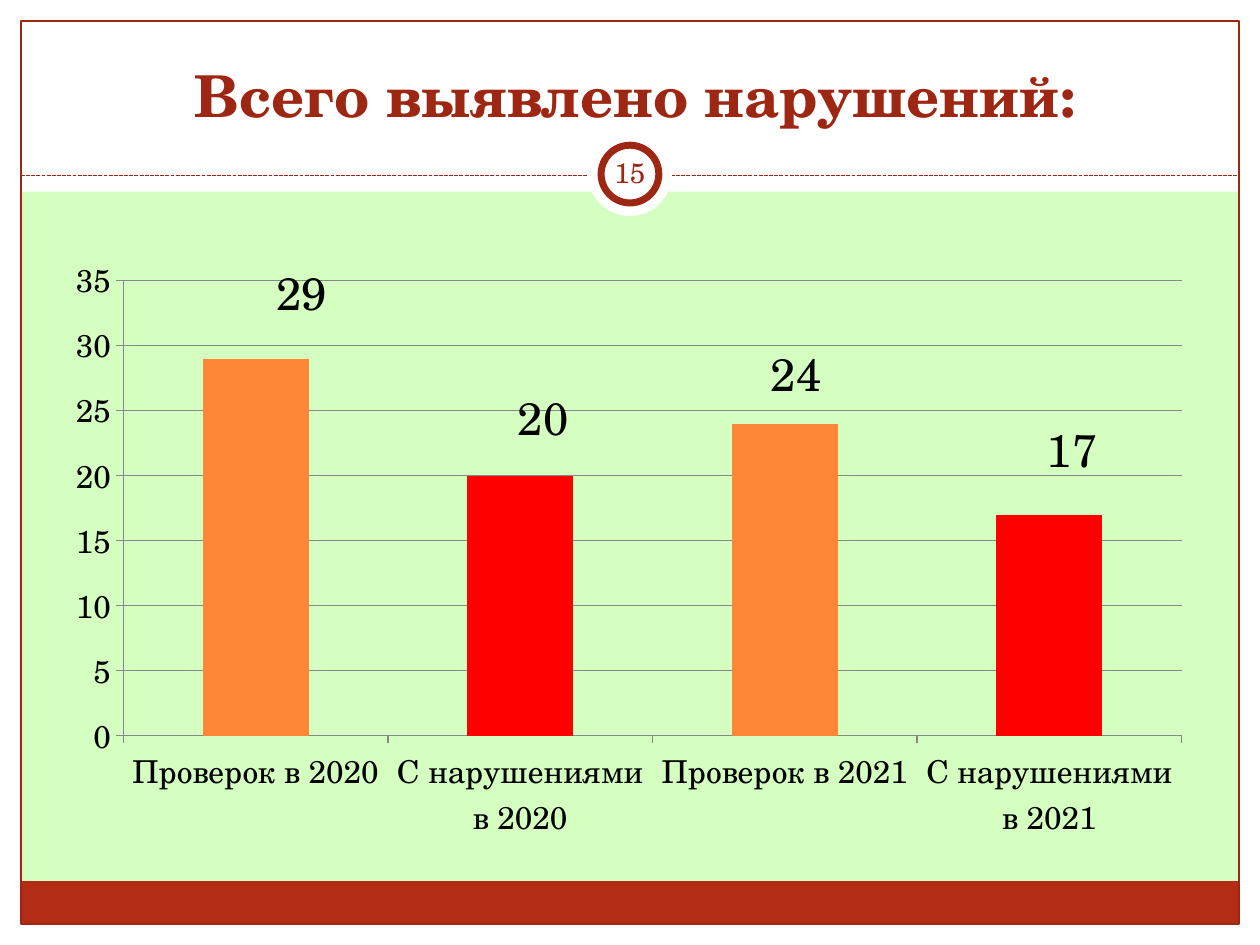
from typing import NamedTuple

from lxml import etree
from pptx import Presentation
from pptx.chart.data import CategoryChartData
from pptx.dml.color import RGBColor
from pptx.enum import chart as ch, dml, shapes, text
from pptx.oxml import ns
from pptx.util import Pt


class Theme:
    font = "TeX Gyre Schola"
    ground, white, black = "D4FFC1", "FFFFFF", "000000"
    dark, band, grid = "9E2713", "B32C16", "878787"
    check, fault = "FE8637", "FF0000"
    head, page, axis, label = 33, 16, 18, 26


class Box(NamedTuple):
    left: float
    top: float
    width: float
    height: float


class Panel(NamedTuple):
    box: Box
    fill: str | None = None
    line: str | None = None
    weight: float = 0.75
    kind: int = shapes.MSO_SHAPE.RECTANGLE


class Bar(NamedTuple):
    name: str
    value: int
    fill: str
    shift: tuple[float, float]  # label offset, as shares of the chart size


W, H, EDGE = 720, 540, 12
RULE = 100.5
OVAL = shapes.MSO_SHAPE.OVAL
C15 = "http://schemas.microsoft.com/office/drawing/2012/chart"
C15_URI = "{CE6537A1-D6FC-4f65-9D91-7224C49458BB}"
PANELS = [
    Panel(Box(0, H - EDGE, W, EDGE), Theme.white),
    Panel(Box(0, 0, W, 109.5), Theme.white),
    Panel(Box(0, 0, EDGE, H), Theme.white),
    Panel(Box(W - EDGE, 0, EDGE, H), Theme.white),
    Panel(Box(EDGE, 503.5, W - 2 * EDGE, 24.5), Theme.band),
    Panel(Box(EDGE, EDGE, W - 2 * EDGE, H - 2 * EDGE), None, Theme.dark),
]
RINGS = [
    Panel(Box(336, 75.5, 48, 48), Theme.white, kind=OVAL),
    Panel(Box(343.5, 83, 33, 33), Theme.white, Theme.dark, 4, OVAL),
]
BARS = [
    Bar("Проверок в 2020", 29, Theme.check, (0.04, -0.42)),
    Bar("C нарушениями в 2020", 20, Theme.fault, (0.02, -0.31)),
    Bar("Проверок в 2021", 24, Theme.check, (0.01, -0.34)),
    Bar("С нарушениями в 2021", 17, Theme.fault, (0.02, -0.29)),
]


def rgb(code: str) -> RGBColor:
    return RGBColor.from_string(code)


def points(box: Box) -> list[Pt]:
    return [Pt(n) for n in box]


def paint(fill, code: str) -> None:
    fill.solid()
    fill.fore_color.rgb = rgb(code)


def style(font, size: float, code: str, bold: bool = False) -> None:
    font.name, font.size, font.bold = Theme.font, Pt(size), bold
    font.color.rgb = rgb(code)


def write(shape, box: Box, words: str, size: float, anchor, bold=False) -> None:
    shape.left, shape.top, shape.width, shape.height = points(box)
    frame = shape.text_frame
    frame.text = words
    frame.word_wrap = True
    frame.auto_size = text.MSO_AUTO_SIZE.NONE
    frame.vertical_anchor = anchor
    para = frame.paragraphs[0]
    para.alignment = text.PP_ALIGN.CENTER
    style(para.runs[0].font, size, Theme.dark, bold)


def draw(slide, panel: Panel) -> None:
    shape = slide.shapes.add_shape(panel.kind, *points(panel.box))
    shape.shadow.inherit = False
    if panel.fill:
        paint(shape.fill, panel.fill)
    else:
        shape.fill.background()
    if panel.line:
        shape.line.color.rgb = rgb(panel.line)
        shape.line.width = Pt(panel.weight)
    else:
        shape.line.fill.background()


def draw_rule(slide) -> None:
    ends = points(Box(EDGE, RULE, W - EDGE, RULE))
    rule = slide.shapes.add_connector(shapes.MSO_CONNECTOR.STRAIGHT, *ends)
    rule.line.color.rgb = rgb(Theme.dark)
    rule.line.width = Pt(0.75)
    rule.line.dash_style = dml.MSO_LINE.SQUARE_DOT
    props = rule.element.find(ns.qn("p:spPr"))
    etree.SubElement(props, ns.qn("a:effectLst"))


def layout(**parts) -> etree.Element:
    """Make a manual chart layout from its named values."""
    root = etree.Element(ns.qn("c:layout"))
    manual = etree.SubElement(root, ns.qn("c:manualLayout"))
    for tag, value in parts.items():
        etree.SubElement(manual, ns.qn(f"c:{tag}")).set("val", str(value))
    return root


def place_plot(chart) -> None:
    area = chart.element.find(".//" + ns.qn("c:plotArea"))
    for old in area.findall(ns.qn("c:layout")):
        area.remove(old)
    area.insert(0, layout(layoutTarget="inner", xMode="edge", yMode="edge",
                          x=0.06, y=0.06, w=0.92, h=0.75))


def place_label(series, index: int, shift: tuple[float, float]) -> None:
    label = series.points[index].data_label
    style(label.font, Theme.label, Theme.black)
    item = series.data_labels._element.findall(ns.qn("c:dLbl"))[index]
    item.insert(1, layout(x=shift[0], y=shift[1]))


def hide_leaders(series) -> None:
    """Turn off leader lines, in the base format and in its 2012 extension."""
    labels = series.data_labels._element
    for flag in labels.findall(ns.qn("c:showLeaderLines")):
        flag.set("val", "0")
    more = etree.SubElement(labels, ns.qn("c:extLst"))
    ext = etree.SubElement(more, ns.qn("c:ext"), nsmap={"c15": C15})
    ext.set("uri", C15_URI)
    etree.SubElement(ext, f"{{{C15}}}showLeaderLines").set("val", "0")


def draw_chart(slide, box: Box) -> None:
    data = CategoryChartData()
    data.categories = [bar.name for bar in BARS]
    data.add_series("Series 1", [bar.value for bar in BARS])
    kind = ch.XL_CHART_TYPE.COLUMN_STACKED
    chart = slide.shapes.add_chart(kind, *points(box), data).chart
    chart.has_legend = chart.has_title = False
    style(chart.font, Theme.axis, Theme.black)
    place_plot(chart)

    scale = chart.value_axis
    scale.minimum_scale, scale.maximum_scale, scale.major_unit = 0, 35, 5
    scale.has_major_gridlines = True
    lines = scale.major_gridlines.format.line
    for line in (lines, scale.format.line, chart.category_axis.format.line):
        line.color.rgb = rgb(Theme.grid)
        line.width = Pt(0.75)
    for axis in (scale, chart.category_axis):
        axis.major_tick_mark = ch.XL_TICK_MARK.OUTSIDE

    plot = chart.plots[0]
    plot.gap_width, plot.overlap, plot.vary_by_categories = 150, 100, False
    series = plot.series[0]
    paint(series.format.fill, Theme.check)
    series.data_labels.show_value = True
    style(series.data_labels.font, Theme.label, Theme.black)
    for index, bar in enumerate(BARS):
        paint(series.points[index].format.fill, bar.fill)
        place_label(series, index, bar.shift)
    hide_leaders(series)


def main() -> None:
    deck = Presentation()
    deck.slide_width, deck.slide_height = Pt(W), Pt(H)
    slide = deck.slides.add_slide(deck.slide_layouts[5])
    paint(slide.background.fill, Theme.ground)
    for panel in PANELS:
        draw(slide, panel)
    draw_rule(slide)
    for ring in RINGS:
        draw(slide, ring)
    draw_chart(slide, Box(31, 139.5, 657.5, 347))

    title = slide.shapes.title
    slide.shapes._spTree.append(title.element)  # bring in front of the panels
    write(title, Box(20, 15, 686, 62.6), "Всего выявлено нарушений:",
          Theme.head, text.MSO_ANCHOR.BOTTOM, True)
    spot = Box(342, 81.5, 36, 34.5)
    page = slide.shapes.add_textbox(*points(spot))
    write(page, spot, "15", Theme.page, text.MSO_ANCHOR.MIDDLE)
    frame = page.text_frame
    frame.margin_left = frame.margin_right = Pt(3.6)
    deck.save("out.pptx")


if __name__ == "__main__":
    main()
